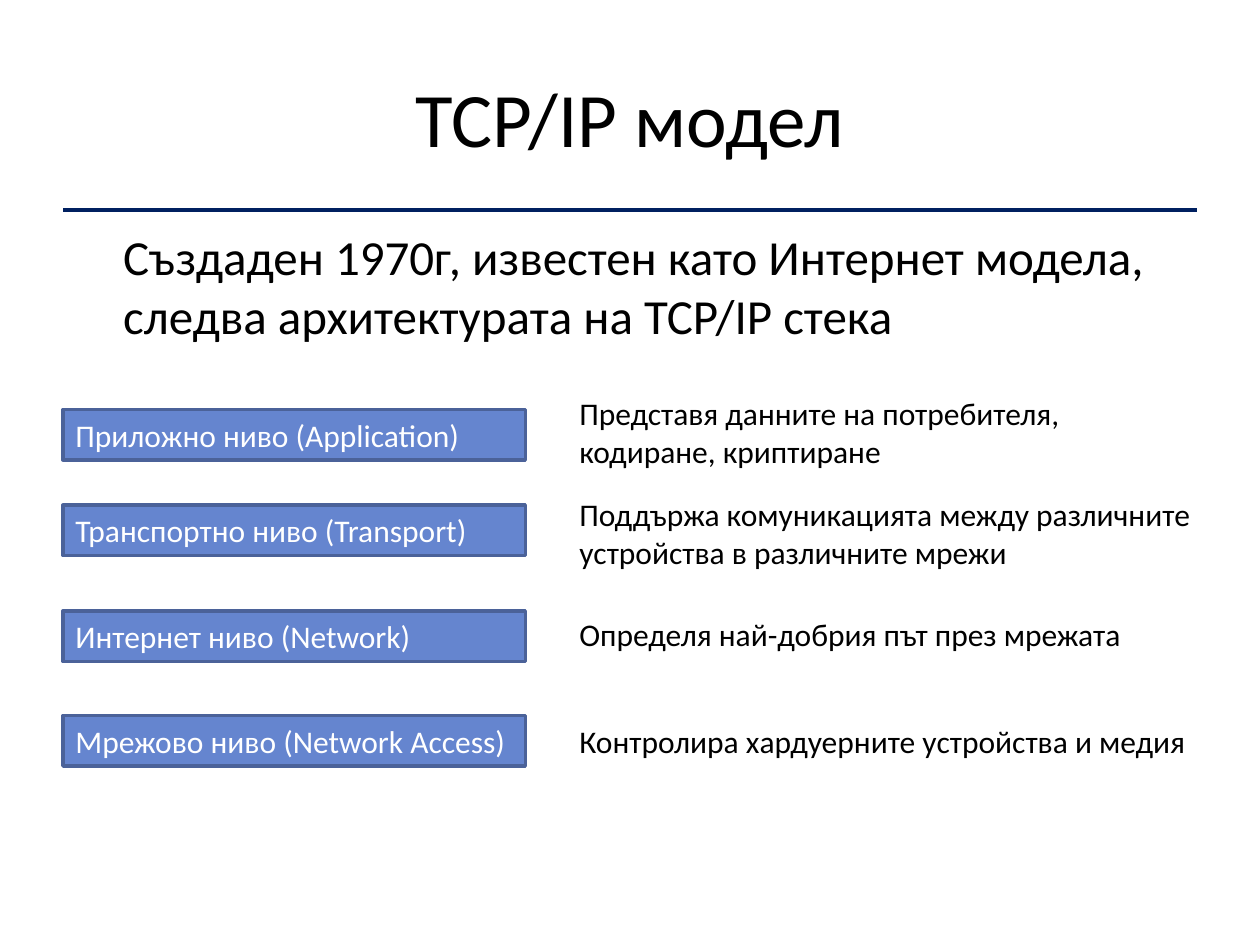
from pptx import Presentation
from pptx.dml.color import RGBColor
from pptx.enum import shapes, text
from pptx.oxml.ns import qn
from pptx.util import Inches, Pt

FONT = "Calibri"
BLACK = RGBColor(0x00, 0x00, 0x00)
WHITE = RGBColor(0xFF, 0xFF, 0xFF)
NAVY = RGBColor(0x00, 0x20, 0x60)
BLUE = RGBColor(0x65, 0x85, 0xCF)
DARK_BLUE = RGBColor(0x4B, 0x62, 0x99)

LAYERS = [
    ("Приложно ниво (Application)", 3.25,
     "Представя данните на потребителя, кодиране, криптиране", (4.5, 3.08, 5, 0.71)),
    ("Транспортно ниво (Transport)", 4.01,
     "Поддържа комуникацията между различните устройства в различните мрежи",
     (4.5, 3.88, 5.17, 0.71)),
    ("Интернет ниво (Network)", 4.85,
     "Определя най-добрия път през мрежата", (4.5, 4.83, 5.17, 0.4)),
    ("Мрежово ниво (Network Access)", 5.68,
     "Контролира хардуерните устройства и медия", (4.5, 5.68, 5.17, 0.4)),
]


def write(shape, words, size, color=BLACK, align=text.PP_ALIGN.LEFT,
          anchor=text.MSO_ANCHOR.TOP):
    """Write one wrapped paragraph into a shape and return the paragraph."""
    frame = shape.text_frame
    frame.word_wrap = True
    frame.vertical_anchor = anchor
    paragraph = frame.paragraphs[0]
    paragraph.alignment = align
    run = paragraph.add_run()
    run.text = words
    run.font.name = FONT
    run.font.size = Pt(size)
    run.font.color.rgb = color
    return paragraph


def add_text(slide, box, words, size, **style):
    """Add a text box and return its paragraph."""
    return write(slide.shapes.add_textbox(*map(Inches, box)), words, size, **style)


def add_title(slide, box):
    """Add the centred title."""
    add_text(slide, box, "TCP/IP модел", 44, align=text.PP_ALIGN.CENTER,
             anchor=text.MSO_ANCHOR.MIDDLE)


def add_rule(slide, left, top, width):
    """Add the horizontal rule below the title."""
    rule = slide.shapes.add_connector(
        shapes.MSO_CONNECTOR.STRAIGHT,
        *map(Inches, (left, top, left + width, top)))
    rule.line.color.rgb = NAVY
    rule.line.width = Pt(2.25)
    properties = rule._element.spPr
    properties.append(properties.makeelement(qn("a:effectLst"), {}))


def add_introduction(slide, box):
    """Add the indented introduction."""
    paragraph = add_text(
        slide, box,
        "Създаден 1970г, известен като Интернет модела, следва архитектурата на TCP/IP стека",
        28)
    paragraph._p.get_or_add_pPr().set("marL", str(Inches(0.38)))


def add_layer(slide, name, name_box, description, description_box):
    """Add one layer's name bar and its description."""
    bar = slide.shapes.add_shape(
        shapes.MSO_SHAPE.RECTANGLE, *map(Inches, name_box))
    bar.shadow.inherit = False
    bar.fill.solid()
    bar.fill.fore_color.rgb = BLUE
    bar.line.color.rgb = DARK_BLUE
    bar.line.width = Pt(2)
    write(bar, name, 18, WHITE)
    add_text(slide, description_box, description, 18)


def main():
    """Build and save the presentation."""
    presentation = Presentation()
    presentation.slide_width = Inches(10)
    presentation.slide_height = Inches(7.5)
    slide = presentation.slides.add_slide(presentation.slide_layouts[6])
    add_rule(slide, 0.5, 1.67, 9)
    add_title(slide, (0.5, 0.3, 9, 1.25))
    add_introduction(slide, (0.5, 1.75, 9, 1.17))
    for name, top, description, description_box in LAYERS:
        add_layer(slide, name, (0.5, top, 3.67, 0.4), description, description_box)
    presentation.save("out.pptx")


if __name__ == "__main__":
    main()
